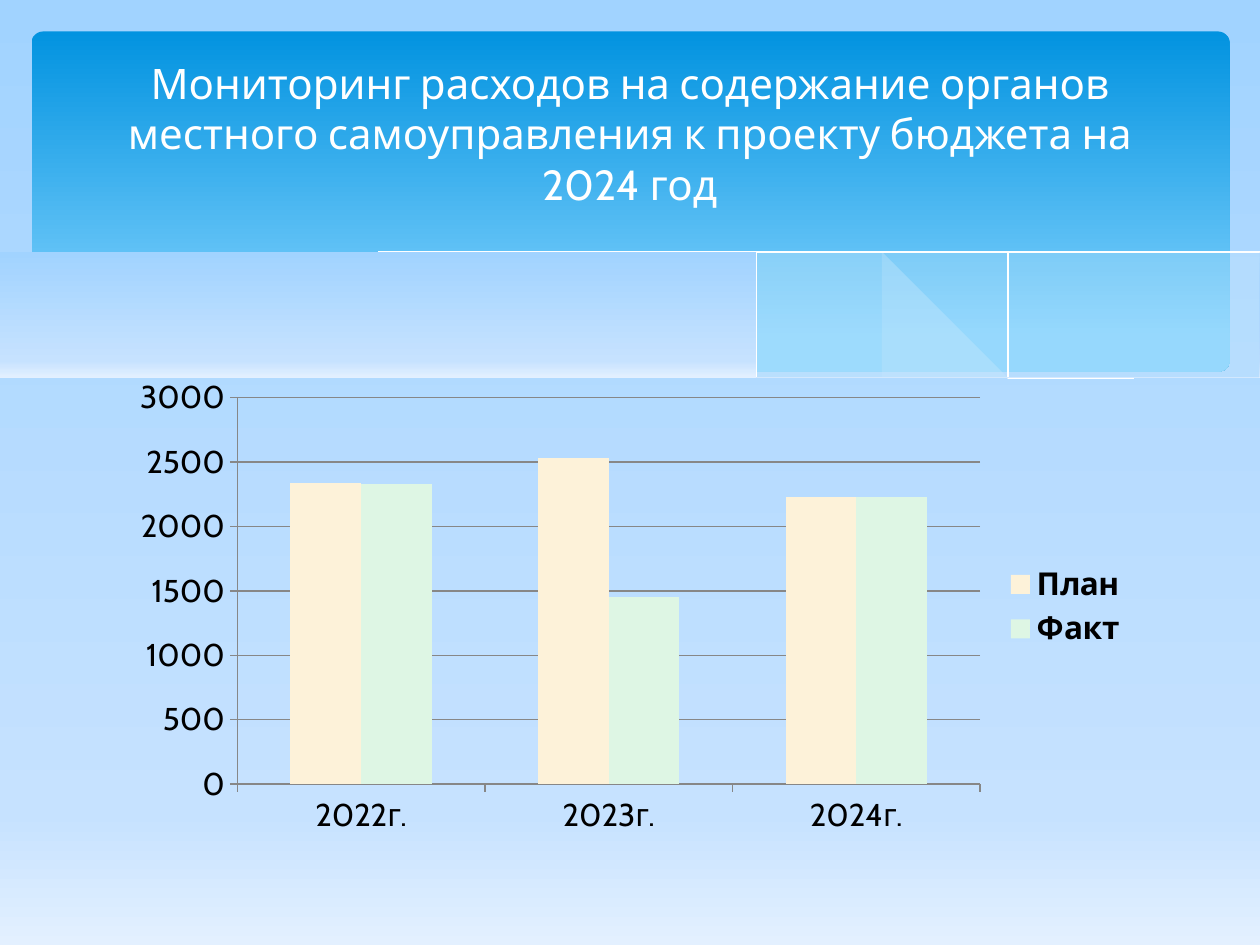
from lxml import etree
from pptx import Presentation
from pptx import util as u
from pptx.chart.data import CategoryChartData
from pptx.dml.color import RGBColor
from pptx.enum import chart as charts, shapes, text
from pptx.oxml.ns import qn

WIDTH, HEIGHT = 10, 7.5
FONT = "Cabin"
COLORS = {"plan": "FDF2D9", "fact": "DEF6E4", "wave": "C6E7FC",
          "white": "FFFFFF", "black": "000000", "axis": "878787"}
SKY = [(0, "A1D3FF"), (86, "C6E2FF"), (100, "E3F0FF")]
HEADER = [(0, "0293E0"), (90, "83D3FE")]

TITLE = ("Мониторинг расходов на содержание органов местного "
         "самоуправления к проекту бюджета на 2024 год")
YEARS = ["2022г.", "2023г.", "2024г."]
SERIES = [("План", [2340, 2530, 2230], "plan"),
          ("Факт", [2330, 1450, 2230], "fact")]

# Each wave is a list of smooth curves, joined by straight edges.
RIGHT_WAVE = [
    [(9.76, 2), (9.35, 2.07), (8.61, 2.23), (7.79, 2.42), (7.06, 2.57), (6.61, 2.65)],
    [(6.61, 2.65), (7.19, 2.72), (7.69, 2.77), (8.24, 2.77), (8.72, 2.74),
     (9.21, 2.65), (9.76, 2.47)]]
LEFT_WAVE = [
    [(8.93, 2.73), (8.37, 2.65), (7.75, 2.54), (7.06, 2.4), (6.29, 2.22),
     (5.69, 2.08), (5.14, 1.98), (4.42, 1.89), (3.8, 1.85), (3.28, 1.87), (2.86, 1.91)],
    [(2.86, 1.91), (3.42, 1.99), (4.04, 2.11), (4.49, 2.22), (5.3, 2.4),
     (6.01, 2.55), (6.65, 2.66), (7.22, 2.74), (7.85, 2.78), (8.38, 2.78), (8.93, 2.73)]]
FALLING_LINE = [[(3.09, 1.95), (3.53, 1.89), (4.16, 1.87), (4.89, 1.9), (5.56, 1.97),
                 (6.36, 2.08), (7.27, 2.26), (8.31, 2.51), (9.07, 2.72)]]
RISING_LINE = [[(6.13, 2.57), (6.72, 2.41), (7.48, 2.23), (8.06, 2.1),
                (8.66, 1.99), (9.24, 1.9), (9.75, 1.85)]]
LOWER_EDGE = [
    [(9.77, 2.46), (9.3, 2.62), (8.75, 2.73), (8.09, 2.77), (7.44, 2.74), (6.88, 2.68),
     (6.26, 2.58), (5.55, 2.45), (5.03, 2.33), (4.47, 2.2), (3.91, 2.07), (3.4, 1.97),
     (2.92, 1.9), (2.5, 1.86), (1.93, 1.84), (1.46, 1.85), (1.06, 1.89), (0.76, 1.95),
     (0.46, 2.03), (0.23, 2.13)],
    [(0.23, 3.29), (9.77, 3.29)]]


def rgb(name):
    return RGBColor.from_string(COLORS[name])


def inches(*values):
    return [u.Inches(value) for value in values]


def set_gradient(fill, element, stops):
    """Fill from top to bottom with any number of colour stops."""
    fill.gradient()
    fill.gradient_angle = 270
    stop_list = element.find(".//" + qn("a:gsLst"))
    for old in list(stop_list):
        stop_list.remove(old)
    for position, color in stops:
        stop = etree.SubElement(stop_list, qn("a:gs"), pos=str(position * 1000))
        etree.SubElement(stop, qn("a:srgbClr"), val=color)


def smooth(points, steps=5):
    """Run a Catmull-Rom curve through the points."""
    padded = [points[0], *points, points[-1]]
    curve = [points[0]]
    for a, b, c, d in zip(padded, padded[1:], padded[2:], padded[3:]):
        for step in range(1, steps + 1):
            t = step / steps
            curve.append(tuple(
                (2 * q + (r - p) * t + (2 * p - 5 * q + 4 * r - s) * t ** 2
                 + (3 * q - p - 3 * r + s) * t ** 3) / 2
                for p, q, r, s in zip(a, b, c, d)))
    return curve


def add_wave(slide, curves, closed=True):
    points = [point for curve in curves for point in smooth(curve)]
    builder = slide.shapes.build_freeform(*points[0], scale=u.Inches(1))
    builder.add_line_segments(points[1:], close=closed)
    shape = builder.convert_to_shape()
    shape.shadow.inherit = False
    shape.fill.background()
    shape.line.fill.background()
    return shape


def add_header(slide):
    header = slide.shapes.add_shape(shapes.MSO_SHAPE.ROUNDED_RECTANGLE,
                                    *inches(0.25, 0.25, 9.51, 2.7))
    header.adjustments[0] = 0.034
    header.shadow.inherit = False
    header.line.fill.background()
    set_gradient(header.fill, header._element, HEADER)

    for curves, opacity in ((RIGHT_WAVE, 29), (LEFT_WAVE, 40)):
        wave = add_wave(slide, curves)
        wave.fill.solid()
        wave.fill.fore_color.rgb = rgb("wave")
        color = wave._element.spPr.find(".//" + qn("a:srgbClr"))
        etree.SubElement(color, qn("a:alpha"), val=str(opacity * 1000))
    for curves in (FALLING_LINE, RISING_LINE):
        line = add_wave(slide, curves, closed=False).line
        line.color.rgb = rgb("white")
        line.width = u.Pt(0)
    edge = add_wave(slide, LOWER_EDGE)
    set_gradient(edge.fill, edge._element, SKY)


def add_chart(slide):
    data = CategoryChartData()
    data.categories = YEARS
    for name, values, _ in SERIES:
        data.add_series(name, values)
    chart = slide.shapes.add_chart(charts.XL_CHART_TYPE.COLUMN_CLUSTERED,
                                   *inches(0.95, 2.93, 8.1, 3.77), data).chart
    chart.has_title = False
    chart.has_legend = True
    chart.legend.position = charts.XL_LEGEND_POSITION.RIGHT
    chart.legend.include_in_layout = False
    for font, bold in ((chart.font, False), (chart.legend.font, True)):
        font.name, font.size, font.bold = FONT, u.Pt(18), bold
        font.color.rgb = rgb("black")

    plot = chart.plots[0]
    plot.gap_width, plot.overlap, plot.vary_by_categories = 150, 0, False
    for series, (_, _, color) in zip(plot.series, SERIES):
        series.format.fill.solid()
        series.format.fill.fore_color.rgb = rgb(color)

    values = chart.value_axis
    values.minimum_scale, values.maximum_scale, values.major_unit = 0, 3000, 500
    values.has_major_gridlines = True
    for axis in (chart.category_axis, values):
        axis.major_tick_mark = charts.XL_TICK_MARK.OUTSIDE
    for part in (chart.category_axis, values, values.major_gridlines):
        part.format.line.color.rgb = rgb("axis")
        part.format.line.width = u.Pt(0.75)


def add_title(slide):
    title = slide.shapes.title
    title.left, title.top, title.width, title.height = inches(0.5, 0.37, 9, 1.37)
    frame = title.text_frame
    frame.text = TITLE
    frame.word_wrap = True
    frame.auto_size = text.MSO_AUTO_SIZE.NONE
    frame.vertical_anchor = text.MSO_ANCHOR.MIDDLE
    paragraph = frame.paragraphs[0]
    paragraph.alignment = text.PP_ALIGN.CENTER
    font = paragraph.runs[0].font
    font.name, font.size = FONT, u.Pt(24)
    font.color.rgb = rgb("white")
    slide.shapes._spTree.append(title._element)  # bring above the header


def main():
    presentation = Presentation()
    presentation.slide_width, presentation.slide_height = inches(WIDTH, HEIGHT)
    slide = presentation.slides.add_slide(presentation.slide_layouts[5])
    set_gradient(slide.background.fill, slide._element, SKY)
    add_header(slide)
    add_chart(slide)
    add_title(slide)
    presentation.save("out.pptx")


if __name__ == "__main__":
    main()
